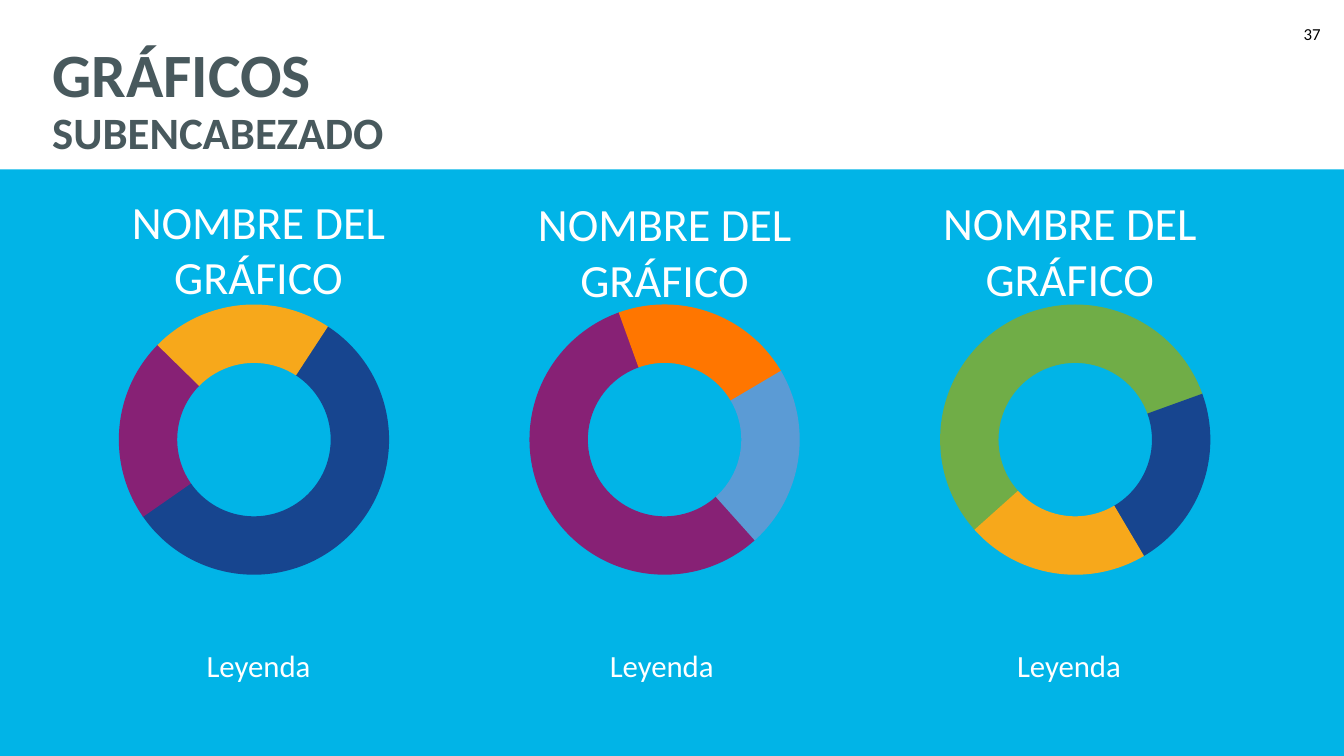
from pptx import Presentation
from pptx import util as u
from pptx.dml.color import RGBColor
from pptx.enum import shapes, text

COLORS = {
    "white": "FFFFFF", "black": "000000", "slate": "48595D", "cyan": "01B4E7",
    "navy": "17458F", "purple": "872175", "gold": "F7A81B", "orange": "FF7600",
    "sky": "5B9BD5", "green": "70AD47",
}
ARC_ANGLES = [(302.81, 145.43), (145.14, 224.57), (224.4, 303.19)]
RING_THICKNESS = 0.216
RING_SIZE = 193
ADJUSTMENT_PER_DEGREE = 0.6
CHARTS = [
    {"ring": 84.9, "name": (51.8, 134.6, 265.7), "legend": 51.8, "turn": 0,
     "colors": ["navy", "purple", "gold"]},
    {"ring": 378.2, "name": (347, 136.1, 255.6), "legend": 339.8, "turn": 105,
     "colors": ["purple", "orange", "sky"]},
    {"ring": 671.5, "name": (631.4, 135.4, 265.7), "legend": 630.7, "turn": 195,
     "colors": ["green", "navy", "gold"]},
]


def add_filled(page, kind, box, color):
    """Add a borderless shape in the given box and colour."""
    shape = page.shapes.add_shape(kind, *map(u.Pt, box))
    shape.shadow.inherit = False
    shape.fill.solid()
    shape.fill.fore_color.rgb = RGBColor.from_string(COLORS[color])
    shape.line.fill.background()
    return shape


def add_label(page, box, words, sizes, color, align, anchor, bold=False):
    """Add a wrapped text box whose lines take the given sizes."""
    label = page.shapes.add_textbox(*map(u.Pt, box))
    frame = label.text_frame
    frame.word_wrap = True
    frame.vertical_anchor = anchor
    frame.text = words
    para = frame.paragraphs[0]
    para.alignment = align
    for span, size in zip(para.runs, sizes):
        span.font.name = "Calibri"
        span.font.size = u.Pt(size)
        span.font.bold = bold
        span.font.color.rgb = RGBColor.from_string(COLORS[color])
    return frame


def add_header(page, box):
    """Place the two-line title and the page number in the header box."""
    left, top, width, height = box
    frame = add_label(page, (left + 30.2, top, width - 54.2, height),
                      "GRÁFICOS\vSUBENCABEZADO", [44, 32], "slate",
                      text.PP_ALIGN.LEFT, text.MSO_ANCHOR.BOTTOM, bold=True)
    frame.margin_top = 0
    frame.margin_bottom = u.Pt(7.2)
    frame.paragraphs[0].line_spacing = 0.9
    add_label(page, (left + width - 42.7, top + 9.4, 33.1, 28.8), "37", [12],
              "black", text.PP_ALIGN.RIGHT, text.MSO_ANCHOR.MIDDLE)


def add_ring(page, box, colors, turn):
    """Draw a ring of coloured arcs, turned clockwise by some degrees."""
    for (start, end), color in zip(ARC_ANGLES, colors):
        arc = add_filled(page, shapes.MSO_SHAPE.BLOCK_ARC, box, color)
        arc.adjustments[0] = start * ADJUSTMENT_PER_DEGREE
        arc.adjustments[1] = end * ADJUSTMENT_PER_DEGREE
        arc.adjustments[2] = RING_THICKNESS
        arc.rotation = turn


def add_charts(page, box):
    """Fill the panel with rings, their names and their legends."""
    left, top, width, height = box
    add_filled(page, shapes.MSO_SHAPE.RECTANGLE, box, "cyan")
    ring_top = top + 96.5
    legend_top = ring_top + RING_SIZE
    for chart in CHARTS:
        ring_box = (left + chart["ring"], ring_top, RING_SIZE, RING_SIZE)
        add_ring(page, ring_box, chart["colors"], chart["turn"])
        name_left, name_top, name_width = chart["name"]
        add_label(page, (left + name_left, name_top, name_width, 47.5),
                  "NOMBRE DEL GRÁFICO", [33], "white",
                  text.PP_ALIGN.CENTER, text.MSO_ANCHOR.TOP)
        add_label(page, (left + chart["legend"], legend_top, 265.7,
                         top + height - legend_top),
                  "Leyenda", [22], "white",
                  text.PP_ALIGN.CENTER, text.MSO_ANCHOR.MIDDLE)


def main():
    """Build the slide and save the deck."""
    deck = Presentation()
    deck.slide_width, deck.slide_height = u.Pt(960), u.Pt(540)
    page = deck.slides.add_slide(deck.slide_layouts[6])
    add_charts(page, (0, 121, 960, 419))
    add_header(page, (0, 0, 960, 121))
    deck.save("out.pptx")


if __name__ == "__main__":
    main()
